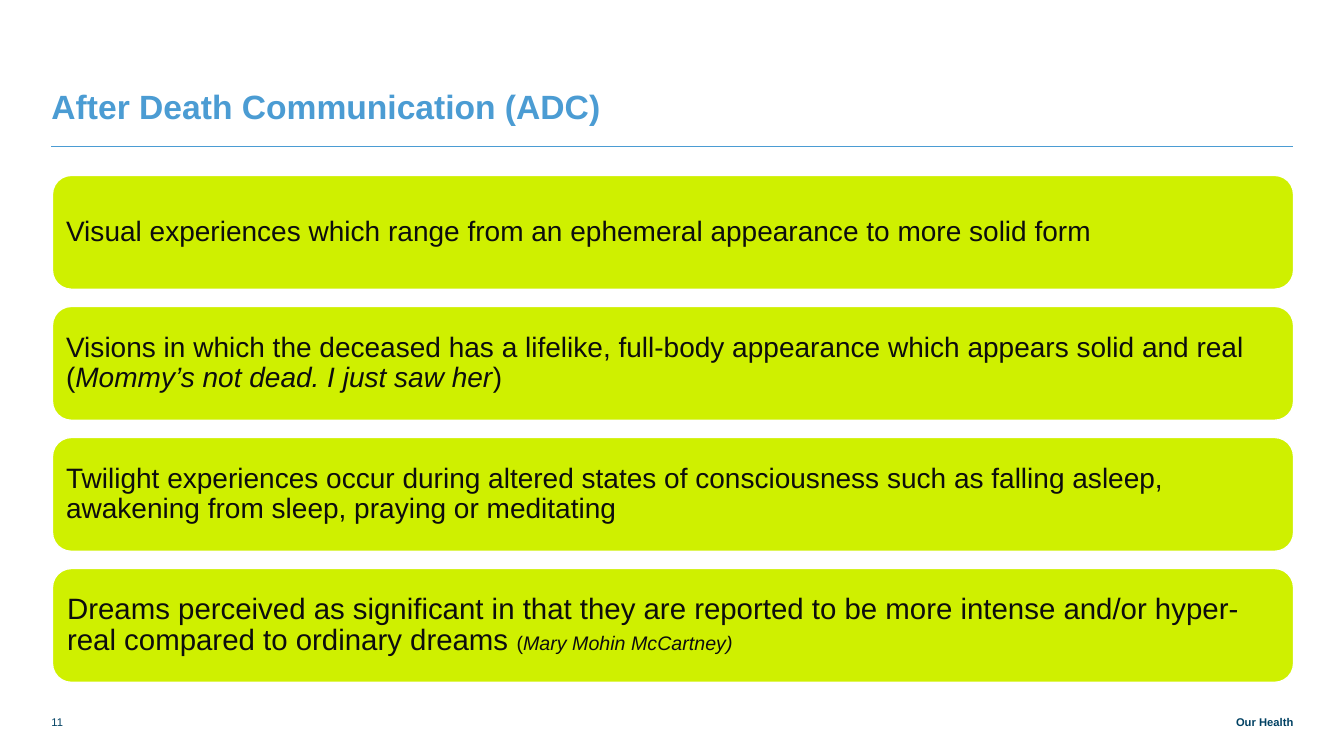
from pptx import Presentation
from pptx.dml.color import RGBColor
from pptx.enum.shapes import MSO_CONNECTOR, MSO_SHAPE
from pptx.enum.text import MSO_ANCHOR, MSO_AUTO_SIZE, PP_ALIGN
from pptx.util import Inches, Pt
from lxml import etree

BLUE = RGBColor(0x4B, 0x9C, 0xD3)
NAVY = RGBColor(0x00, 0x41, 0x63)
LIME = RGBColor(0xCF, 0xF0, 0x00)
INK = RGBColor(0x0D, 0x0D, 0x0D)
WHITE = RGBColor(0xFF, 0xFF, 0xFF)
LEFT, RIGHT = PP_ALIGN.LEFT, PP_ALIGN.RIGHT
MIDDLE, BOTTOM = MSO_ANCHOR.MIDDLE, MSO_ANCHOR.BOTTOM
A_NS = "http://schemas.openxmlformats.org/drawingml/2006/main"

MARGIN, WIDTH = 0.51, 12.31
CARD_TOP, CARD_HEIGHT, CARD_PITCH = 1.74, 1.13, 1.3


def write(sp, runs, size=20, color=INK, bold=False, align=LEFT,
          anchor=MIDDLE, insets=(0, 0, 0, 0), spacing=None):
    tf = sp.text_frame
    tf.word_wrap = True
    tf.auto_size = MSO_AUTO_SIZE.NONE
    tf.vertical_anchor = anchor
    tf.margin_left, tf.margin_top, tf.margin_right, tf.margin_bottom = map(Inches, insets)
    p = tf.paragraphs[0]
    p.alignment = align
    p.line_spacing = spacing
    for text, italic, run_size in runs:
        r = p.add_run()
        r.text = text
        r.font.name = "Arial"
        r.font.size = Pt(run_size or size)
        r.font.bold = bold
        r.font.italic = italic
        r.font.color.rgb = color


prs = Presentation()
prs.slide_width, prs.slide_height = Inches(13.33), Inches(7.5)
slide = prs.slides.add_slide(prs.slide_layouts[5])

title = slide.shapes.title
title.left, title.top = Inches(MARGIN), Inches(0.38)
title.width, title.height = Inches(WIDTH), Inches(0.79)
write(title, [("After Death Communication (ADC)", False, None)], size=24, color=BLUE,
      bold=True, anchor=BOTTOM, insets=(0, 0.95, 2.12, 0), spacing=Pt(28))

rule = slide.shapes.add_connector(MSO_CONNECTOR.STRAIGHT, Inches(MARGIN), Inches(1.45),
                                  Inches(MARGIN + WIDTH), Inches(1.45))
rule.line.color.rgb = BLUE
rule.line.width = Pt(0.5)
etree.SubElement(rule._element.spPr, f"{{{A_NS}}}effectLst")

cards = [
    (20, 0.08, [("Visual experiences which range from an ephemeral appearance to more solid form",
                 False, None)]),
    (20, 0.08, [("Visions in which the deceased has a lifelike, full-body appearance which "
                 "appears solid and real (", False, None),
                ("Mommy’s not dead. I just saw her", True, None),
                (")", False, None)]),
    (20, 0.08, [("Twilight experiences occur during altered states of consciousness such as "
                 "falling asleep, awakening from sleep, praying or meditating", False, None)]),
    (21, 0.09, [("Dreams perceived as significant in that they are reported to be more intense "
                 "and/or hyper-real compared to ordinary dreams ", False, None),
                ("(", False, 14),
                ("Mary Mohin McCartney)", True, 14)]),
]
for row, (size, inset, runs) in enumerate(cards):
    card = slide.shapes.add_shape(MSO_SHAPE.ROUNDED_RECTANGLE, Inches(MARGIN + 0.01),
                                  Inches(CARD_TOP + row * CARD_PITCH),
                                  Inches(WIDTH), Inches(CARD_HEIGHT))
    card.shadow.inherit = False
    card.fill.solid()
    card.fill.fore_color.rgb = LIME
    card.line.color.rgb = WHITE
    card.line.width = Pt(1)
    write(card, runs, size=size, insets=(inset,) * 4, spacing=0.9)

footers = [
    (MARGIN, 0.46, "11", False, LEFT),
    (11.19, 1.64, "Our Health", True, RIGHT),
]
for left, width, text, bold, align in footers:
    box = slide.shapes.add_textbox(Inches(left), Inches(7), Inches(width), Inches(0.23))
    write(box, [(text, False, None)], size=8, color=NAVY, bold=bold, align=align, anchor=BOTTOM)

prs.save("out.pptx")
